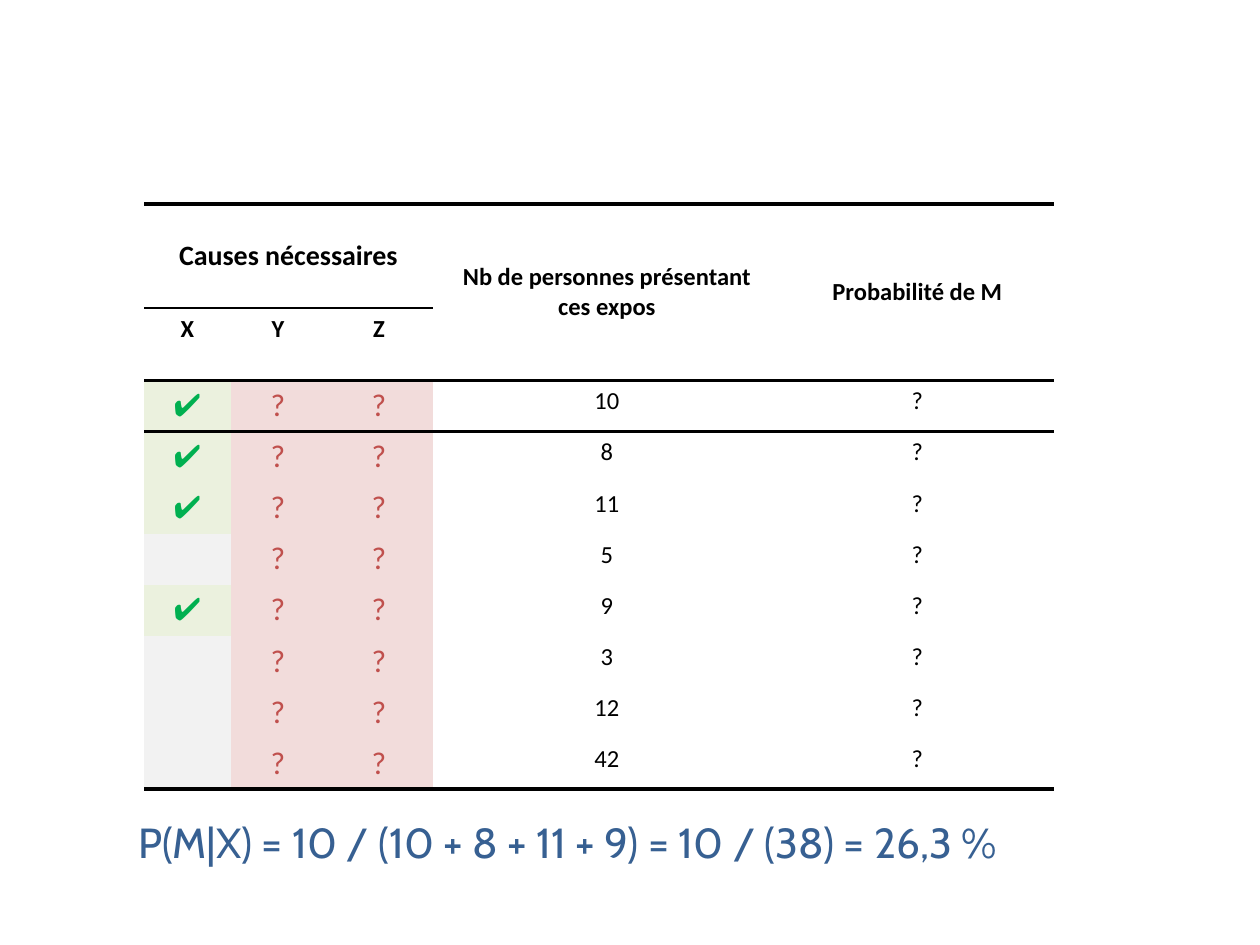
import lxml.etree
import pptx
import pptx.dml.color
import pptx.enum.text
import pptx.oxml.ns
import pptx.util

PX = 914400 / 126
COLUMN_WIDTHS = [87, 94, 108, 348, 273]
ROW_HEIGHTS = [104, 72] + [51] * 8
CAUSE_COLUMNS = 3
RULES = {0: 2.25, 1: 1, 2: 2.25, 3: 2.25, 10: 2.25}
OBSERVATIONS = [
    (True, 10), (True, 8), (True, 11), (False, 5),
    (True, 9), (False, 3), (False, 12), (False, 42),
]


def px(length):
    """Turn a length in pixels into EMU."""
    return pptx.util.Emu(round(length * PX))


def color(value):
    """Turn a hex string into a colour."""
    return pptx.dml.color.RGBColor.from_string(value)


def write(frame, text, size=14, font="Calibri", ink="000000", bold=False, align="CENTER"):
    """Write one formatted paragraph into a text frame."""
    para = frame.paragraphs[0]
    para.alignment = getattr(pptx.enum.text.PP_ALIGN, align)
    span = para.add_run()
    span.text = text
    span.font.size = pptx.util.Pt(size)
    span.font.name = font
    span.font.bold = bold
    span.font.color.rgb = color(ink)


def set_border(cell, side, width):
    """Draw one side of a cell in black, or hide it when there is no width."""
    tag = pptx.oxml.ns.qn
    properties = cell._tc.get_or_add_tcPr()
    line = lxml.etree.SubElement(properties, tag(f"a:ln{side}"))
    if width:
        line.set("w", str(pptx.util.Pt(width)))
        fill = lxml.etree.SubElement(line, tag("a:solidFill"))
        lxml.etree.SubElement(fill, tag("a:srgbClr"), val="000000")
    else:
        lxml.etree.SubElement(line, tag("a:noFill"))


def rule_width(boundary, column):
    """Give the width of the rule at a row boundary in one column."""
    if boundary == 1 and column >= CAUSE_COLUMNS:
        return None
    return RULES.get(boundary)


def style_cell(table, row, column):
    """Set the borders of one cell and clear its fill."""
    cell = table.cell(row, column)
    height = cell.span_height if cell.is_merge_origin else 1
    widths = {"L": None, "R": None, "T": rule_width(row, column),
              "B": rule_width(row + height, column)}
    for side, width in widths.items():
        set_border(cell, side, width)
    cell.fill.background()


def fill_cell(cell, shade):
    """Give a cell a solid fill."""
    cell.fill.solid()
    cell.fill.fore_color.rgb = color(shade)


def add_grid(slide):
    """Add the table with its sizes, merged headings and rules."""
    table = slide.shapes.add_table(
        len(ROW_HEIGHTS), len(COLUMN_WIDTHS), px(144), px(204),
        px(sum(COLUMN_WIDTHS)), px(sum(ROW_HEIGHTS))).table
    table.first_row = table.horz_banding = False
    for column, width in zip(table.columns, COLUMN_WIDTHS):
        column.width = px(width)
    for row, height in zip(table.rows, ROW_HEIGHTS):
        row.height = px(height)
    table.cell(0, 0).merge(table.cell(0, CAUSE_COLUMNS - 1))
    for column in (3, 4):
        table.cell(0, column).merge(table.cell(1, column))
    for row in range(len(ROW_HEIGHTS)):
        for column in range(len(COLUMN_WIDTHS)):
            style_cell(table, row, column)
    return table


def write_headings(table):
    """Write the two heading rows."""
    headings = [(0, "Causes nécessaires", 16),
                (3, "Nb de personnes présentant ces expos", 14),
                (4, "Probabilité de M", 14)]
    for column, text, size in headings:
        cell = table.cell(0, column)
        cell.vertical_anchor = pptx.enum.text.MSO_ANCHOR.MIDDLE
        write(cell.text_frame, text, size=size, bold=True)
    for column, cause in enumerate("XYZ"):
        write(table.cell(1, column).text_frame, cause, bold=True)


def write_observation(table, row, exposed, count):
    """Write one row of exposures, head count and probability."""
    x, y, z, people, probability = (table.cell(row, column) for column in range(5))
    fill_cell(x, "EBF1DE" if exposed else "F2F2F2")
    if exposed:
        write(x.text_frame, "✔", size=18, ink="00B050")
    for cell in (y, z):
        fill_cell(cell, "F2DCDB")
        write(cell.text_frame, "?", size=18, ink="C0504D")
    write(people.text_frame, str(count))
    write(probability.text_frame, "?")


def add_formula(slide, text):
    """Add the line of calculation below the table."""
    box = slide.shapes.add_textbox(px(126), px(810), px(931), px(63))
    box.text_frame.word_wrap = False
    box.text_frame.auto_size = pptx.enum.text.MSO_AUTO_SIZE.SHAPE_TO_FIT_TEXT
    write(box.text_frame, text, size=24, font="Cabin", ink="376092", align="LEFT")


def main():
    """Build the slide and save the deck."""
    deck = pptx.Presentation()
    deck.slide_width, deck.slide_height = px(1260), px(945)
    slide = deck.slides.add_slide(deck.slide_layouts[6])
    table = add_grid(slide)
    write_headings(table)
    for row, (exposed, count) in enumerate(OBSERVATIONS, start=2):
        write_observation(table, row, exposed, count)
    add_formula(slide, "P(M|X) = 10 / (10 + 8 + 11 + 9) = 10 / (38) = 26,3 %")
    deck.save("out.pptx")


if __name__ == "__main__":
    main()
